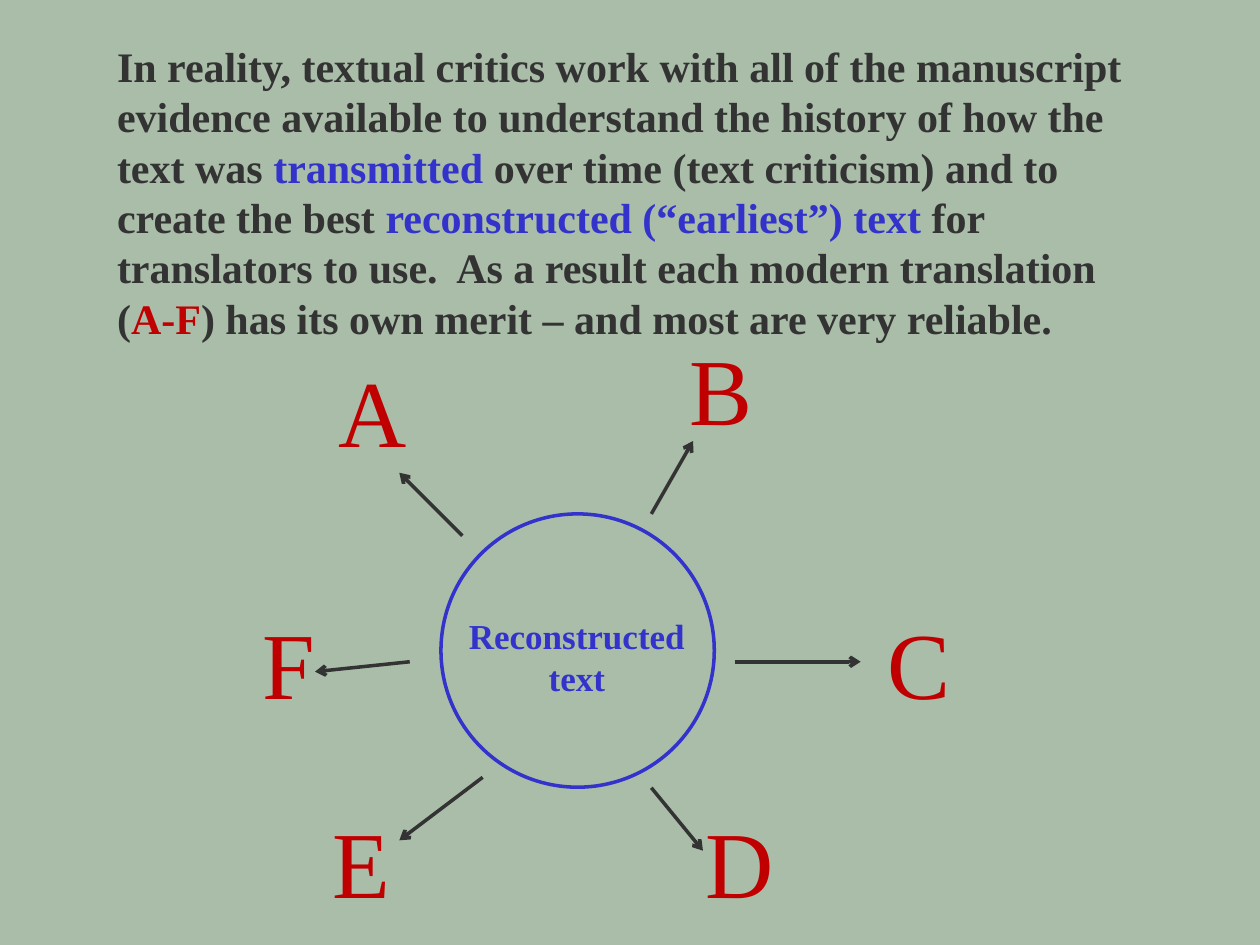
"""Build a slide on how a reconstructed text feeds translations A to F."""
from lxml.etree import SubElement
from pptx import Presentation
from pptx.dml.color import RGBColor
from pptx.enum.shapes import MSO_CONNECTOR as Connector, MSO_SHAPE as Shape
from pptx.enum.text import PP_ALIGN as Align
from pptx.oxml.ns import qn
from pptx.util import Cm, Pt

SAGE = RGBColor(0xA9, 0xBD, 0xA9)
CHARCOAL = RGBColor(0x33, 0x33, 0x33)
BLUE = RGBColor(0x33, 0x33, 0xCC)
RED = RGBColor(0xC0, 0x00, 0x00)
FONT = "Times New Roman"
LETTER_WIDTH = 1.9


def add_text(slide, place, runs, size, bold=True, align=Align.LEFT, wrap=True):
    box = slide.shapes.add_textbox(*[Cm(length) for length in place])
    box.text_frame.word_wrap = wrap
    para = box.text_frame.paragraphs[0]
    para.alignment = align
    for text, color in runs:
        span = para.add_run()
        span.text = text
        span.font.name = FONT
        span.font.size = Pt(size)
        span.font.bold = bold
        span.font.color.rgb = color


deck = Presentation()
deck.slide_width, deck.slide_height = Cm(25.4), Cm(19.05)
slide = deck.slides.add_slide(deck.slide_layouts[6])
slide.background.fill.solid()
slide.background.fill.fore_color.rgb = SAGE

intro = [
    ("In reality, textual critics work with all of the manuscript evidence "
     "available to understand the history of how the text was ", CHARCOAL),
    ("transmitted", BLUE),
    (" over time (text criticism) and to create the best ", CHARCOAL),
    ("reconstructed (“earliest”) text", BLUE),
    (" for translators to use.  As a result each modern translation (", CHARCOAL),
    ("A-F", RED),
    (") has its own merit – and most are very reliable.", CHARCOAL),
]
add_text(slide, (2.11, 0.69, 21.39, 6.4), intro, 24)

circle = slide.shapes.add_shape(Shape.OVAL, Cm(8.89), Cm(10.36), Cm(5.51), Cm(5.51))
circle.shadow.inherit = False
circle.fill.background()
circle.line.color.rgb = BLUE
circle.line.width = Pt(2)
add_text(slide, (9.09, 12.27, 5.08, 1.96), [("Reconstructed text", BLUE)], 20,
         align=Align.CENTER)

translations = [
    ("A", 7.51, 6.99, (9.32, 10.8, 8.05, 9.53)),
    ("B", 14.53, 6.55, (13.13, 10.36, 13.97, 8.89)),
    ("C", 18.53, 12.07, (14.81, 13.34, 17.35, 13.34)),
    ("D", 14.92, 16.08, (13.13, 15.88, 14.17, 17.15)),
    ("E", 7.29, 16.08, (9.73, 15.67, 8.05, 16.94)),
    ("F", 5.82, 12.07, (8.26, 13.34, 6.35, 13.54)),
]
for letter, center, top, ends in translations:
    arrow = slide.shapes.add_connector(Connector.STRAIGHT, *[Cm(end) for end in ends])
    arrow.line.color.rgb = CHARCOAL
    arrow.line.width = Pt(2)
    SubElement(arrow.line._get_or_add_ln(), qn("a:tailEnd"), type="arrow")
    SubElement(arrow._element.spPr, qn("a:effectLst"))
    add_text(slide, (center - LETTER_WIDTH / 2, top, LETTER_WIDTH, 2.57),
             [(letter, RED)], 54, bold=False, align=Align.CENTER, wrap=False)

deck.save("out.pptx")
